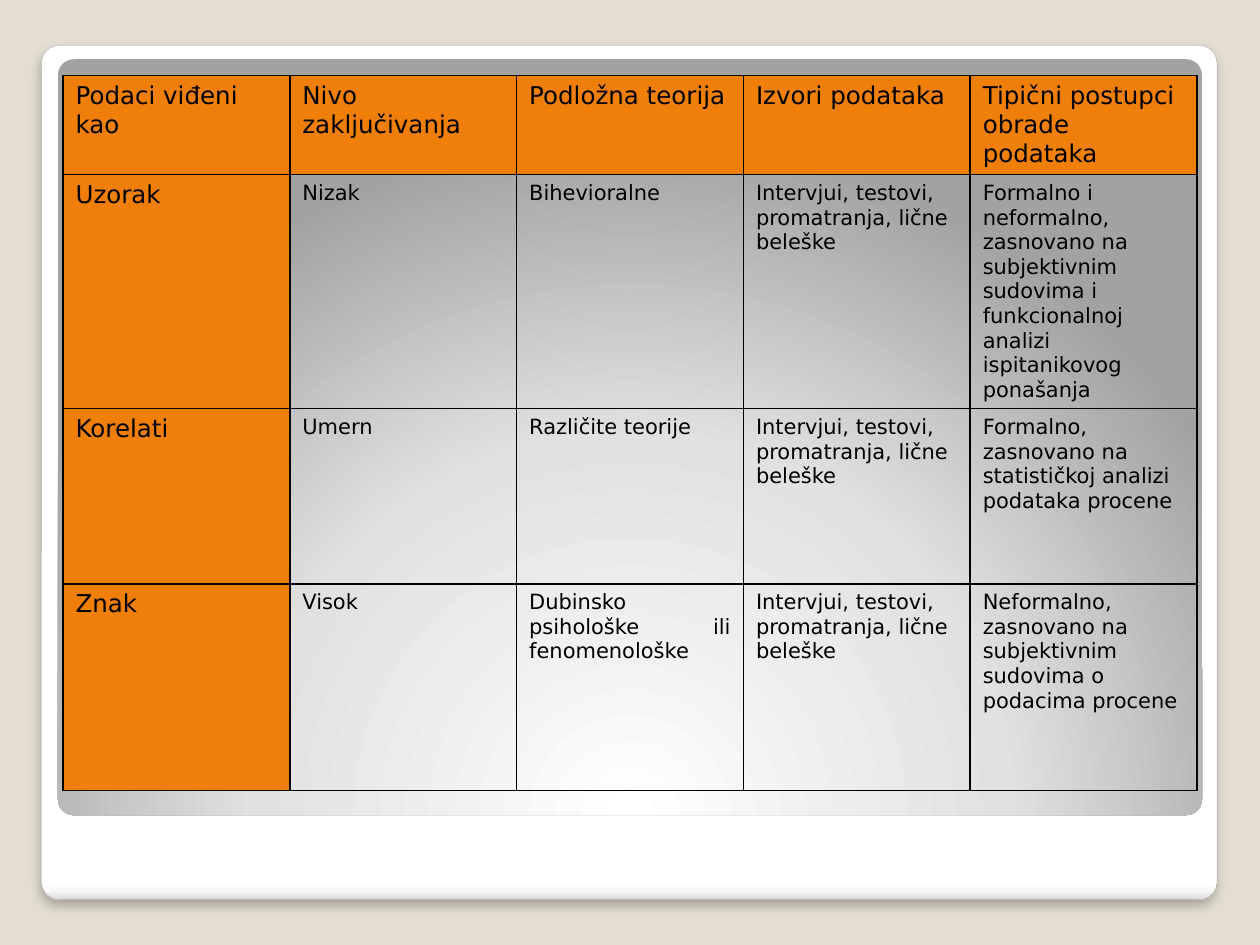
from lxml.etree import SubElement, fromstring
from pptx import Presentation
from pptx.dml.color import RGBColor
from pptx.enum.shapes import MSO_SHAPE as Preset
from pptx.enum.text import PP_ALIGN as Align
from pptx.oxml.ns import nsdecls, qn
from pptx.util import Inches, Pt

THEME = {
    "font": "DejaVu Sans",
    "heading_size": 14,
    "body_size": 12,
    "background": "E3DED1",
    "heading_fill": "F07F09",
    "ink": "000000",
    "frame_line": "A4A4A4",
    "frame_stops": [(0, "FFFFFF"), (98, "FFFFFF"), (99, "F7F7F7"), (100, "DADADA")],
    "panel_stops": [(0, "FFFFFF"), (55, "E1E1E1"), (100, "A2A2A2")],
}
SOURCES = "Intervjui, testovi, promatranja, lične beleške"
ROWS = [
    ["Podaci viđeni kao", "Nivo zaključivanja", "Podložna teorija",
     "Izvori podataka", "Tipični postupci obrade podataka"],
    ["Uzorak", "Nizak", "Bihevioralne", SOURCES,
     "Formalno i neformalno, zasnovano na subjektivnim sudovima i "
     "funkcionalnoj analizi ispitanikovog ponašanja"],
    ["Korelati", "Umern", "Različite teorije", SOURCES,
     "Formalno, zasnovano na statističkoj analizi podataka procene"],
    ["Znak", "Visok", "Dubinsko psihološke ili fenomenološke", SOURCES,
     "Neformalno, zasnovano na subjektivnim sudovima o podacima procene"],
]
ROW_HEIGHTS = [0.74, 1.82, 1.39, 1.64]
COLUMN_WIDTH = 1.8
JUSTIFIED = [(2, 2), (3, 2)]


def add_rounded_panel(slide, box, stops, direction):
    shape = slide.shapes.add_shape(Preset.ROUNDED_RECTANGLE, *map(Inches, box))
    shape.adjustments[0] = 0.021
    shape.shadow.inherit = False
    shape.fill.gradient()
    stop_xml = "".join(
        f'<a:gs pos="{position * 1000}"><a:srgbClr val="{color}"/></a:gs>'
        for position, color in stops)
    properties = shape.element.spPr
    properties.replace(properties.find(qn("a:gradFill")), fromstring(
        f'<a:gradFill {nsdecls("a")} rotWithShape="1">'
        f"<a:gsLst>{stop_xml}</a:gsLst>{direction}</a:gradFill>"))
    return shape


presentation = Presentation()
presentation.slide_width, presentation.slide_height = Inches(10), Inches(7.5)
slide = presentation.slides.add_slide(presentation.slide_layouts[6])
slide.background.fill.solid()
slide.background.fill.fore_color.rgb = RGBColor.from_string(THEME["background"])

frame = add_rounded_panel(slide, (0.33, 0.36, 9.33, 6.78), THEME["frame_stops"],
                          '<a:lin ang="5400000" scaled="0"/>')
frame.line.color.rgb = RGBColor.from_string(THEME["frame_line"])
frame.line.width = Pt(0.16)
shadow = SubElement(frame.element.spPr.find(qn("a:effectLst")), qn("a:outerShdw"),
                    blurRad=str(Pt(6)), dist=str(Pt(4)), dir="5400000", rotWithShape="0")
shadow_color = SubElement(shadow, qn("a:srgbClr"), val=THEME["ink"])
SubElement(shadow_color, qn("a:alpha"), val="25000")

panel = add_rounded_panel(
    slide, (0.46, 0.47, 9.08, 6), THEME["panel_stops"],
    '<a:path path="circle"><a:fillToRect l="50000" t="175000" r="50000" b="-75000"/></a:path>')
panel.line.fill.background()

table = slide.shapes.add_table(
    len(ROWS), len(ROWS[0]), Inches(0.5), Inches(0.6),
    Inches(COLUMN_WIDTH * len(ROWS[0])), Inches(sum(ROW_HEIGHTS))).table
table.first_row = table.horz_banding = False
for column in table.columns:
    column.width = Inches(COLUMN_WIDTH)

for row_index, (texts, height) in enumerate(zip(ROWS, ROW_HEIGHTS)):
    table.rows[row_index].height = Inches(height)
    for column_index, text in enumerate(texts):
        cell = table.cell(row_index, column_index)
        is_heading = row_index == 0 or column_index == 0
        if is_heading:
            cell.fill.solid()
            cell.fill.fore_color.rgb = RGBColor.from_string(THEME["heading_fill"])
        else:
            cell.fill.background()
        cell.text_frame.text = text
        paragraph = cell.text_frame.paragraphs[0]
        if (row_index, column_index) in JUSTIFIED:
            paragraph.alignment = Align.JUSTIFY
        font = paragraph.runs[0].font
        font.name = THEME["font"]
        font.size = Pt(THEME["heading_size" if is_heading else "body_size"])
        font.color.rgb = RGBColor.from_string(THEME["ink"])
        cell_properties = cell._tc.get_or_add_tcPr()
        for position, side in enumerate(("lnL", "lnR", "lnT", "lnB")):
            cell_properties.insert(position, fromstring(
                f'<a:{side} {nsdecls("a")} w="{Pt(1)}"><a:solidFill>'
                f'<a:srgbClr val="{THEME["ink"]}"/></a:solidFill></a:{side}>'))

presentation.save("out.pptx")
